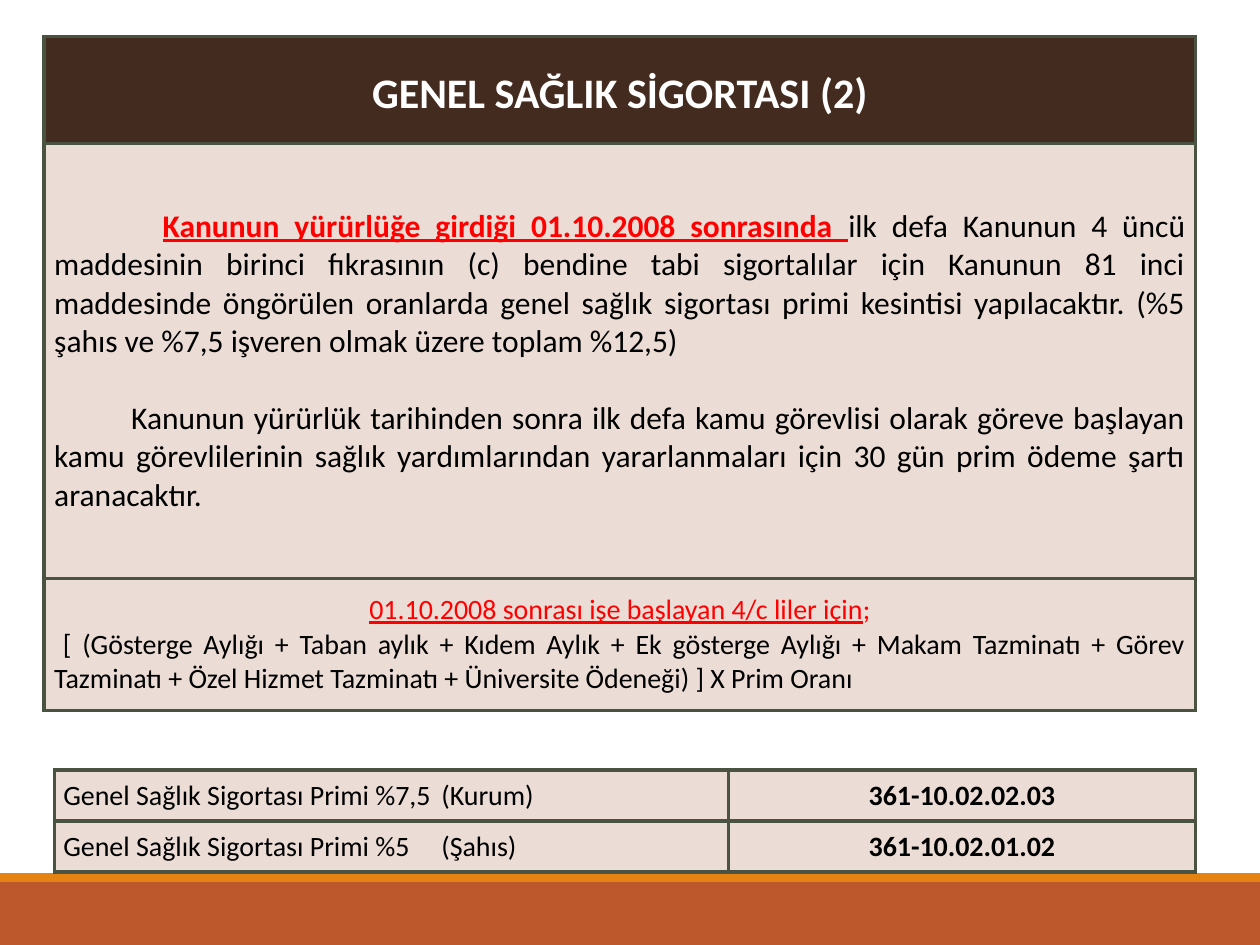
from lxml import etree
from pptx import Presentation
from pptx.dml.color import RGBColor
from pptx.enum.shapes import MSO_SHAPE
from pptx.enum.text import MSO_ANCHOR, PP_ALIGN
from pptx.oxml.ns import qn
from pptx.util import Pt

CENTER, JUSTIFY = PP_ALIGN.CENTER, PP_ALIGN.JUSTIFY
MIDDLE = MSO_ANCHOR.MIDDLE
RECTANGLE = MSO_SHAPE.RECTANGLE

WHITE = RGBColor(0xFF, 0xFF, 0xFF)
BLACK = RGBColor(0x00, 0x00, 0x00)
RED = RGBColor(0xFF, 0x00, 0x00)
BROWN = RGBColor(0x43, 0x2B, 0x20)
CREAM = RGBColor(0xEB, 0xDC, 0xD5)
BORDER = RGBColor(0x4A, 0x52, 0x42)
RUST = RGBColor(0xBD, 0x58, 0x2C)
ORANGE = RGBColor(0xE4, 0x83, 0x12)

FONT = "Calibri"
BORDER_WIDTH = 2.25
SLIDE_WIDTH, SLIDE_HEIGHT = 720, 540
BANDS = [(504, 36, RUST), (499, 5, ORANGE)]

HEADING = [dict(align=CENTER, size=24, spacing=1.15, runs=[
    ("GENEL SAĞLIK SİGORTASI (2)", dict(color=WHITE, bold=True))])]
RULES = [
    dict(align=JUSTIFY, size=18, indent=62, runs=[
        ("Kanunun yürürlüğe girdiği 01.10.2008 sonrasında ",
         dict(color=RED, bold=True, underline=True)),
        ("ilk defa Kanunun 4 üncü maddesinin birinci fıkrasının (c) bendine tabi "
         "sigortalılar için Kanunun 81 inci maddesinde öngörülen oranlarda genel "
         "sağlık sigortası primi kesintisi yapılacaktır. (%5 şahıs ve %7,5 işveren "
         "olmak üzere toplam %12,5)", {})]),
    dict(align=JUSTIFY, size=18, indent=44, before=22, runs=[
        ("Kanunun yürürlük tarihinden sonra ilk defa kamu görevlisi olarak göreve "
         "başlayan kamu görevlilerinin sağlık yardımlarından yararlanmaları için "
         "30 gün prim ödeme şartı aranacaktır.", {})]),
]
FORMULA = [
    dict(align=CENTER, size=16, runs=[
        ("01.10.2008 sonrası işe başlayan 4/c liler için",
         dict(color=RED, underline=True)),
        (";", dict(color=RED))]),
    dict(align=JUSTIFY, size=16, indent=5, runs=[
        ("[ (Gösterge Aylığı + Taban aylık + Kıdem Aylık + Ek gösterge Aylığı + "
         "Makam Tazminatı + Görev Tazminatı + Özel Hizmet Tazminatı + Üniversite "
         "Ödeneği) ] X Prim Oranı", {})]),
]
PREMIUMS = [
    ("Genel Sağlık Sigortası Primi %7,5\t(Kurum)", "361-10.02.02.03"),
    ("Genel Sağlık Sigortası Primi %5\t(Şahıs)", "361-10.02.01.02"),
]


def premium_row(label, code):
    return [
        ([dict(align=JUSTIFY, size=16, tab=261, runs=[(label, {})])], CREAM),
        ([dict(align=CENTER, size=16, runs=[(code, dict(bold=True))])], CREAM),
    ]


TABLES = [
    dict(left=25.2, top=20.9, columns=[658], rows=[61.2, 248.4, 75.6], margins=(5.8, 0.7),
         cells=[[(HEADING, BROWN)], [(RULES, CREAM)], [(FORMULA, CREAM)]]),
    dict(left=31, top=440, columns=[385.4, 266.6], rows=[29.2, 29.2], margins=(5.2, 0),
         cells=[premium_row(*premium) for premium in PREMIUMS]),
]


def fill_paragraph(paragraph, content):
    paragraph.alignment = content["align"]
    paragraph.line_spacing = content.get("spacing", 1.0)
    paragraph.space_before = Pt(content.get("before", 0))
    properties = paragraph._p.get_or_add_pPr()
    properties.set("indent", str(Pt(content.get("indent", 0))))
    if "tab" in content:
        tabs = etree.SubElement(properties, qn("a:tabLst"))
        etree.SubElement(tabs, qn("a:tab"), pos=str(Pt(content["tab"])), algn="l")
    for text, style in content["runs"]:
        run = paragraph.add_run()
        run.text = text
        run.font.name = FONT
        run.font.size = Pt(content["size"])
        run.font.color.rgb = style.get("color", BLACK)
        run.font.bold = style.get("bold", False)
        run.font.underline = style.get("underline", False)


def add_borders(cell):
    properties = cell._tc.get_or_add_tcPr()
    for position, side in enumerate(("lnL", "lnR", "lnT", "lnB")):
        line = etree.Element(qn(f"a:{side}"), w=str(Pt(BORDER_WIDTH)))
        solid = etree.SubElement(line, qn("a:solidFill"))
        etree.SubElement(solid, qn("a:srgbClr"), val=str(BORDER))
        properties.insert(position, line)


def fill_cell(cell, paragraphs, color, margins):
    cell.fill.solid()
    cell.fill.fore_color.rgb = color
    cell.vertical_anchor = MIDDLE
    cell.margin_left = cell.margin_right = Pt(margins[0])
    cell.margin_top = cell.margin_bottom = Pt(margins[1])
    add_borders(cell)
    for index, content in enumerate(paragraphs):
        frame = cell.text_frame
        fill_paragraph(frame.add_paragraph() if index else frame.paragraphs[0], content)


def add_table(slide, layout):
    columns, rows = layout["columns"], layout["rows"]
    table = slide.shapes.add_table(
        len(rows), len(columns), Pt(layout["left"]), Pt(layout["top"]),
        Pt(sum(columns)), Pt(sum(rows))).table
    table.first_row = table.horz_banding = False
    for column, width in zip(table.columns, columns):
        column.width = Pt(width)
    for row, height, contents in zip(table.rows, rows, layout["cells"]):
        row.height = Pt(height)
        for cell, (paragraphs, color) in zip(row.cells, contents):
            fill_cell(cell, paragraphs, color, layout["margins"])


def add_band(slide, top, height, color):
    band = slide.shapes.add_shape(RECTANGLE, 0, Pt(top), Pt(SLIDE_WIDTH), Pt(height))
    band.shadow.inherit = False
    band.fill.solid()
    band.fill.fore_color.rgb = color
    band.line.fill.background()


def main():
    presentation = Presentation()
    presentation.slide_width = Pt(SLIDE_WIDTH)
    presentation.slide_height = Pt(SLIDE_HEIGHT)
    slide = presentation.slides.add_slide(presentation.slide_layouts[6])
    for band in BANDS:
        add_band(slide, *band)
    for layout in TABLES:
        add_table(slide, layout)
    presentation.save("out.pptx")


if __name__ == "__main__":
    main()
